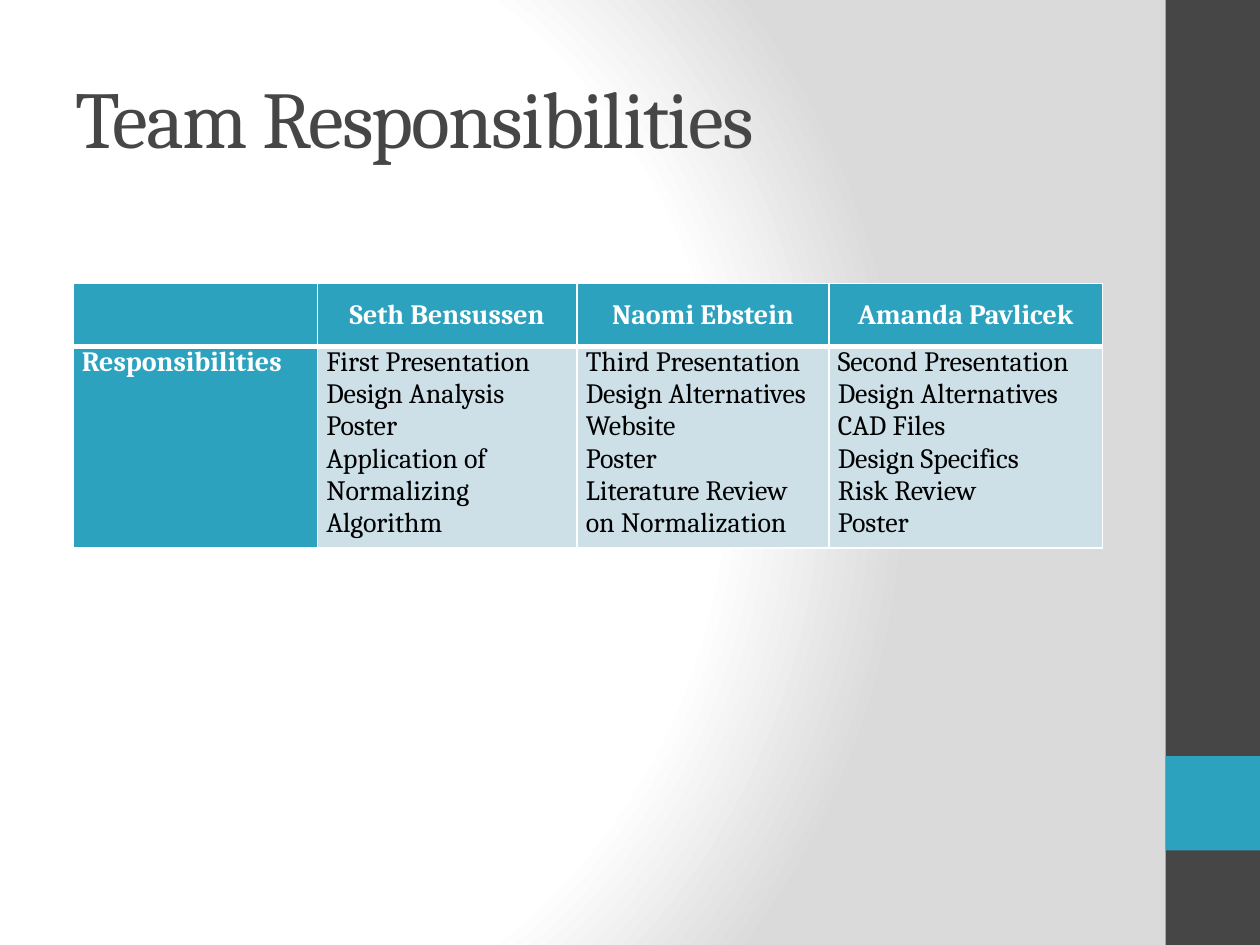
import pptx
import pptx.dml.color
import pptx.enum.shapes
import pptx.enum.text
import pptx.oxml
import pptx.oxml.ns
import pptx.util

WIDTH, HEIGHT = 10, 7.5
FONT = "Cambria"
DARK, TEAL, PALE, WHITE, BLACK = "464646", "2DA2BF", "CDE0E8", "FFFFFF", "000000"
COLUMNS = [1.94, 2.06, 2, 2.17]
ROWS = [0.5, 1.53]
HEADINGS = ["", "Seth Bensussen", "Naomi Ebstein", "Amanda Pavlicek"]
DUTIES = [
    ["Responsibilities"],
    ["First Presentation", "Design Analysis", "Poster",
     "Application of Normalizing Algorithm"],
    ["Third Presentation", "Design Alternatives", "Website", "Poster",
     "Literature Review on Normalization"],
    ["Second Presentation", "Design Alternatives", "CAD Files",
     "Design Specifics", "Risk Review", "Poster"],
]


def inches(*lengths):
    """Convert lengths in inches to slide units."""
    return [pptx.util.Inches(length) for length in lengths]


def paint(fill, color):
    """Give a fill one solid hex colour."""
    fill.solid()
    fill.fore_color.rgb = pptx.dml.color.RGBColor.from_string(color)


def write(tf, lines, size=16, color=BLACK, bold=False, align="LEFT", spacing=None):
    """Write one paragraph per line into a text frame."""
    tf.word_wrap = True
    for i, line in enumerate(lines):
        p = tf.add_paragraph() if i else tf.paragraphs[0]
        p.alignment = getattr(pptx.enum.text.PP_ALIGN, align)
        r = p.add_run()
        r.text = line
        r.font.name, r.font.size, r.font.bold = FONT, pptx.util.Pt(size), bold
        paint(r.font.fill, color)
        if spacing is not None:
            r.font._element.set("spc", str(spacing * 100))


def add_background(s):
    """Fill the background with a circular white to grey gradient."""
    s.background.fill.gradient()
    grad = s.element.find(".//" + pptx.oxml.ns.qn("a:gradFill"))
    stops = "".join(
        f'<a:gs pos="{share * 1000}"><a:srgbClr val="{color}"/></a:gs>'
        for share, color in [(0, WHITE), (75, WHITE), (100, "DADADA")])
    grad.getparent().replace(grad, pptx.oxml.parse_xml(
        f'<a:gradFill {pptx.oxml.ns.nsdecls("a")} rotWithShape="1">'
        f'<a:gsLst>{stops}</a:gsLst><a:path path="circle">'
        '<a:fillToRect l="20000" t="50000" r="100000" b="50000"/>'
        '</a:path></a:gradFill>'))


def add_block(s, left, top, width, height, color):
    """Add a plain rectangle placed by shares of the slide's size."""
    sp = s.shapes.add_shape(
        pptx.enum.shapes.MSO_SHAPE.RECTANGLE,
        *inches(left * WIDTH, top * HEIGHT, width * WIDTH, height * HEIGHT))
    sp.shadow.inherit = False
    sp.line.fill.background()
    paint(sp.fill, color)


def add_title(s, text):
    """Add the slide title."""
    tf = s.shapes.add_textbox(*inches(0.5, 0.3, 8.33, 1.25)).text_frame
    tf.vertical_anchor = pptx.enum.text.MSO_ANCHOR.MIDDLE
    write(tf, [text], size=46, color=DARK, spacing=-1)


def set_borders(cell, **points):
    """Draw white cell borders with the given widths in points."""
    for side in "LRTB":
        cell._tc.get_or_add_tcPr().append(pptx.oxml.parse_xml(
            f'<a:ln{side} {pptx.oxml.ns.nsdecls("a")} w="{points.get(side, 1) * 12700}">'
            f'<a:solidFill><a:srgbClr val="{WHITE}"/></a:solidFill></a:ln{side}>'))


def fill_cell(cell, lines, fill, anchor="TOP", borders=None, **style):
    """Set the margins, borders, fill and text of a table cell."""
    cell.margin_left, cell.margin_right = inches(0.07, 0.07)
    cell.margin_top = cell.margin_bottom = 0
    cell.vertical_anchor = getattr(pptx.enum.text.MSO_ANCHOR, anchor)
    set_borders(cell, **(borders or {}))
    paint(cell.fill, fill)
    if any(lines):
        write(cell.text_frame, lines, **style)


def add_duties_table(s):
    """Add the table of each member's responsibilities."""
    table = s.shapes.add_table(
        len(ROWS), len(COLUMNS), *inches(0.58, 2.25, sum(COLUMNS), sum(ROWS))).table
    for column, width in zip(table.columns, inches(*COLUMNS)):
        column.width = width
    for row, height in zip(table.rows, inches(*ROWS)):
        row.height = height
    for i, (heading, duties) in enumerate(zip(HEADINGS, DUTIES)):
        fill_cell(table.cell(0, i), [heading], TEAL, anchor="MIDDLE",
                  borders={"B": 3}, color=WHITE, bold=True, align="CENTER")
        fill_cell(table.cell(1, i), duties, PALE if i else TEAL, borders={"T": 3},
                  color=BLACK if i else WHITE, bold=i == 0)


def main():
    """Build the slide and save it."""
    prs = pptx.Presentation()
    prs.slide_width, prs.slide_height = inches(WIDTH, HEIGHT)
    s = prs.slides.add_slide(prs.slide_layouts[6])
    add_background(s)
    add_block(s, 0.925, 0, 0.075, 1, DARK)
    add_block(s, 0.925, 0.8, 0.075, 0.1, TEAL)
    add_title(s, "Team Responsibilities")
    add_duties_table(s)
    prs.save("out.pptx")


if __name__ == "__main__":
    main()
